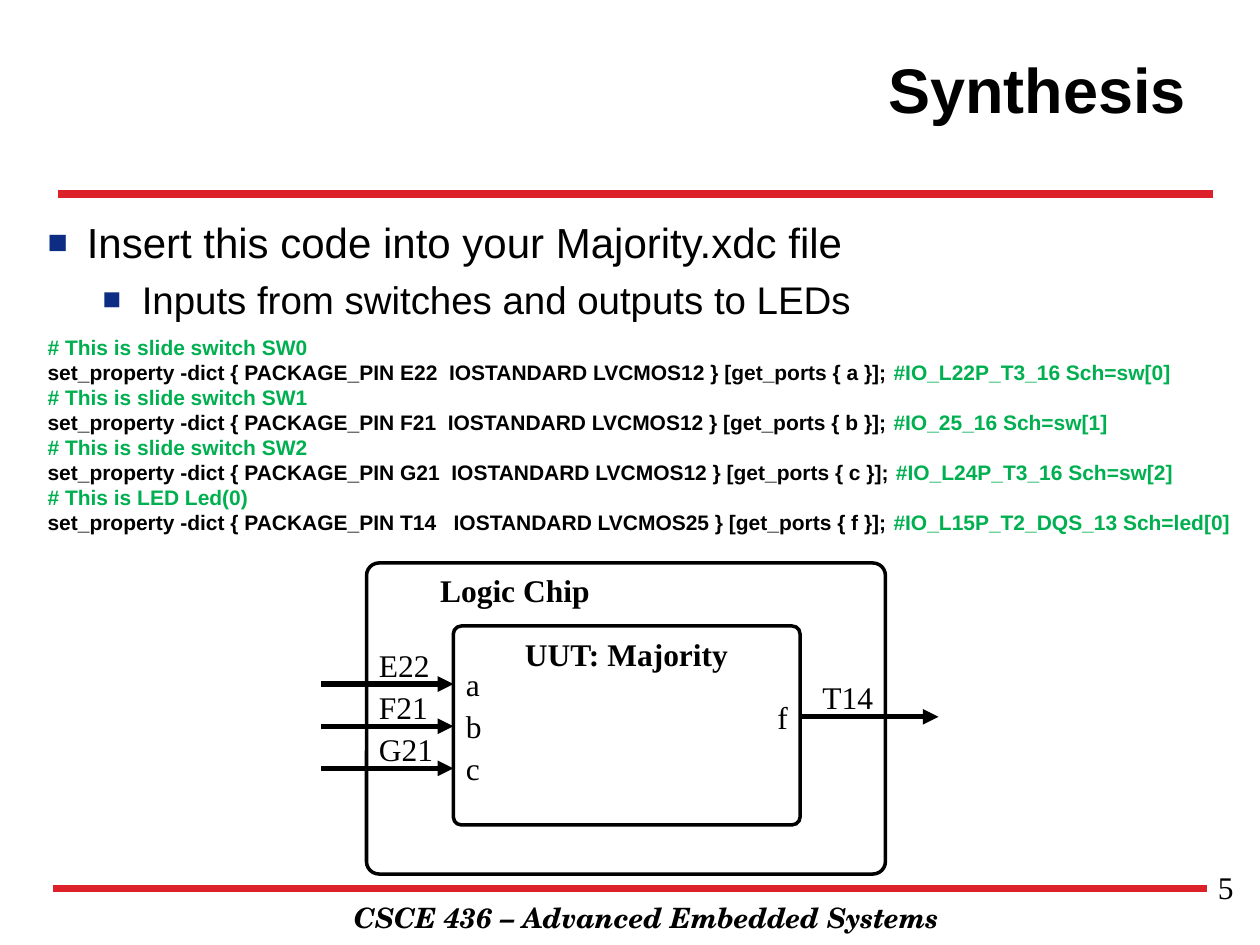
from lxml.etree import SubElement
from pptx import Presentation
from pptx.dml.color import RGBColor
from pptx.enum.shapes import MSO_CONNECTOR, MSO_SHAPE
from pptx.enum.text import MSO_ANCHOR, PP_ALIGN
from pptx.oxml.ns import qn
from pptx.util import Cm, Pt

BLACK = RGBColor(0x00, 0x00, 0x00)
RED = RGBColor(0xDD, 0x21, 0x2B)
NAVY = RGBColor(0x0C, 0x2D, 0x83)
GREEN = RGBColor(0x00, 0xB0, 0x50)

SANS, SERIF, SCHOOL = "Arial", "Times New Roman", "TeX Gyre Schola"

BULLETS = [
    # text, size, left margin in cm, space before
    ("Insert this code into your Majority.xdc file", 24, 0.79, 0),
    ("Inputs from switches and outputs to LEDs", 22, 1.9, 5),
]
CONSTRAINTS = [
    ("# This is slide switch SW0",
     "set_property -dict { PACKAGE_PIN E22  IOSTANDARD LVCMOS12 } [get_ports { a }]; ",
     "#IO_L22P_T3_16 Sch=sw[0]"),
    ("# This is slide switch SW1",
     "set_property -dict { PACKAGE_PIN F21  IOSTANDARD LVCMOS12 } [get_ports { b }]; ",
     "#IO_25_16 Sch=sw[1]"),
    ("# This is slide switch SW2",
     "set_property -dict { PACKAGE_PIN G21  IOSTANDARD LVCMOS12 } [get_ports { c }]; ",
     "#IO_L24P_T3_16 Sch=sw[2]"),
    ("# This is LED Led(0)",
     "set_property -dict { PACKAGE_PIN T14   IOSTANDARD LVCMOS25 } [get_ports { f }]; ",
     "#IO_L15P_T2_DQS_13 Sch=led[0]"),
]
INPUTS = [("E22", "a"), ("F21", "b"), ("G21", "c")]
OUTPUT = ("T14", "f")


def add_run(paragraph, text, size=18, font=SERIF, color=BLACK, bold=False, italic=False):
    run = paragraph.add_run()
    run.text = text
    run.font.size = Pt(size)
    run.font.name = font
    run.font.color.rgb = color
    run.font.bold = bold
    run.font.italic = italic


def add_frame(slide, left, top, width, height, anchor=MSO_ANCHOR.TOP):
    box = slide.shapes.add_textbox(Cm(left), Cm(top), Cm(width), Cm(height))
    frame = box.text_frame
    frame.word_wrap = True
    frame.vertical_anchor = anchor
    return frame


def add_label(slide, text, left, top, width, height=1.02,
              align=PP_ALIGN.LEFT, anchor=MSO_ANCHOR.TOP, **style):
    paragraph = add_frame(slide, left, top, width, height, anchor).paragraphs[0]
    paragraph.alignment = align
    add_run(paragraph, text, **style)


def add_line(slide, left, right, y, color=BLACK, weight=3, arrow=False):
    line = slide.shapes.add_connector(
        MSO_CONNECTOR.STRAIGHT, Cm(left), Cm(y), Cm(right), Cm(y))
    line.line.color.rgb = color
    line.line.width = Pt(weight)
    if arrow:
        SubElement(line.line._get_or_add_ln(), qn("a:tailEnd"), type="triangle")
    SubElement(line._element.spPr, qn("a:effectLst"))


def add_block(slide, left, top, width, height):
    block = slide.shapes.add_shape(
        MSO_SHAPE.ROUNDED_RECTANGLE, Cm(left), Cm(top), Cm(width), Cm(height))
    block.adjustments[0] = 0.04
    block.shadow.inherit = False
    block.fill.background()
    block.line.color.rgb = BLACK
    block.line.width = Pt(2)


def set_bullet(paragraph, margin):
    properties = paragraph._p.get_or_add_pPr()
    properties.set("marL", str(Cm(margin)))
    properties.set("indent", str(-Cm(0.79)))
    color = SubElement(properties, qn("a:buClr"))
    SubElement(color, qn("a:srgbClr"), val=str(NAVY))
    SubElement(properties, qn("a:buSzPct"), val="80000")
    SubElement(properties, qn("a:buFont"), typeface=SANS)
    SubElement(properties, qn("a:buChar"), char="■")


def add_header(slide, left, top, width):
    add_label(slide, "Synthesis", left + 4.14, top, width - 4.44, 3.18,
              align=PP_ALIGN.RIGHT, anchor=MSO_ANCHOR.MIDDLE,
              size=36, font=SANS, bold=True)
    add_line(slide, left, left + width, top + 3.71, RED, 4.5)


def add_footer(slide, left, top, width):
    add_line(slide, left, left + width, top, RED, 4.5)
    add_label(slide, "CSCE 436 – Advanced Embedded Systems",
              left + 2.54, top + 0.12, 18.85, 0.94, align=PP_ALIGN.CENTER,
              size=16, font=SCHOOL, bold=True, italic=True)
    add_label(slide, "5", left + width - 5.13, top - 0.54, 5.92, 1.32,
              align=PP_ALIGN.RIGHT)


def add_body(slide, left, top, width, height):
    frame = add_frame(slide, left, top, width, height)
    for index, (text, size, margin, before) in enumerate(BULLETS):
        paragraph = frame.add_paragraph() if index else frame.paragraphs[0]
        set_bullet(paragraph, margin)
        if before:
            paragraph.space_before = Pt(before)
        add_run(paragraph, text, size=size, font=SANS)

    def add_code(*parts, before=2.8):
        paragraph = frame.add_paragraph()
        paragraph.line_spacing = 0.8
        paragraph.space_before = Pt(before)
        for text, color in parts:
            add_run(paragraph, text, size=12, font=SANS, color=color, bold=True)

    for index, (heading, command, remark) in enumerate(CONSTRAINTS):
        add_code((heading, GREEN), before=2.8 if index else 10)
        add_code((command, BLACK), (remark, GREEN))


def add_chip_diagram(slide, left, top, width, height):
    """Draw the chip outline, the unit inside it, and the pins wired to its ports."""
    unit_left, unit_width = left + 1.75, 6.99
    unit_right = unit_left + unit_width
    add_block(slide, left, top, width, height)
    add_block(slide, unit_left, top + 1.27, unit_width, 4.01)
    add_label(slide, "Logic Chip", left + 0.35, top + 0.03, 5.28,
              align=PP_ALIGN.CENTER, bold=True)
    add_label(slide, "UUT: Majority", unit_left + 0.85, top + 1.32, 5.28,
              align=PP_ALIGN.CENTER, bold=True)

    for index, (pin, port) in enumerate(INPUTS):
        y = top + 2.44 + 0.85 * index
        add_line(slide, left - 0.91, unit_left, y, arrow=True)
        add_label(slide, pin, left, y - 0.9, 1.9)
        add_label(slide, port, unit_left, y - 0.51, 2.1)

    pin, port = OUTPUT
    y = top + 3.1
    add_line(slide, unit_right, left + width + 1.07, y, arrow=True)
    add_label(slide, pin, left + width - 1.9, y - 0.9, 1.9, align=PP_ALIGN.RIGHT)
    add_label(slide, port, unit_right - 0.87, y - 0.51, 0.87, align=PP_ALIGN.RIGHT)


def main():
    deck = Presentation()
    deck.slide_width, deck.slide_height = Cm(25.4), Cm(19.05)
    slide = deck.slides.add_slide(deck.slide_layouts[6])
    add_header(slide, 1.17, 0.2, 23.29)
    add_footer(slide, 1.07, 17.91, 23.26)
    add_body(slide, 0.71, 4.24, 24.69, 12.01)
    add_chip_diagram(slide, 7.39, 11.35, 10.46, 6.27)
    deck.save("out.pptx")


if __name__ == "__main__":
    main()
